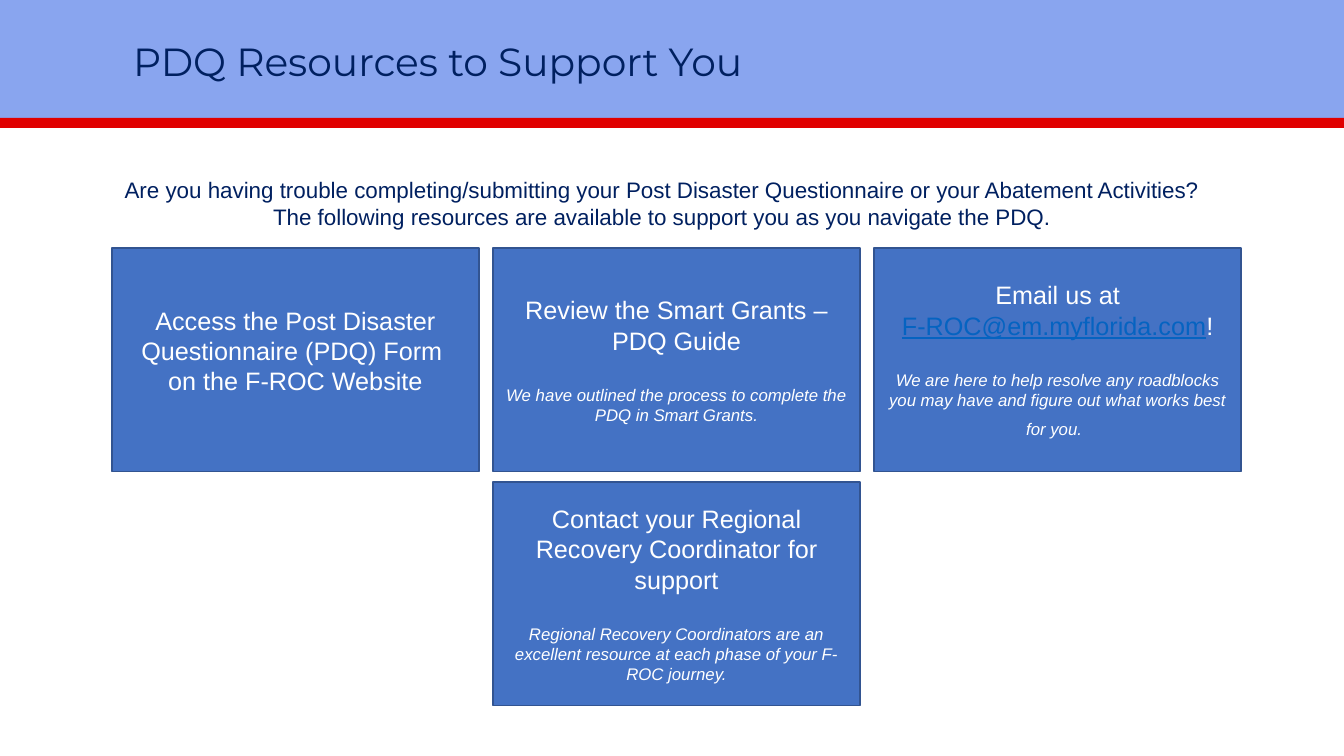
from pptx import Presentation
from pptx.dml.color import RGBColor
from pptx.enum.shapes import MSO_SHAPE
from pptx.enum.text import MSO_ANCHOR, MSO_AUTO_SIZE, PP_ALIGN
from pptx.util import Inches, Pt

RECT = MSO_SHAPE.RECTANGLE
TOP, MIDDLE = MSO_ANCHOR.TOP, MSO_ANCHOR.MIDDLE
LEFT, CENTER = PP_ALIGN.LEFT, PP_ALIGN.CENTER
NO_FIT = MSO_AUTO_SIZE.NONE

SLIDE_W, SLIDE_H = 13.33, 7.5
GRID_X, GRID_Y = 1.11, 2.46
CARD_W, CARD_H = 3.64, 2.22
GAP_X, GAP_Y = 0.14, 0.1
NAVY, WHITE, LINK = "002060", "FFFFFF", "0563C1"

CARDS = [
    (0, 0, [["Access the Post Disaster Questionnaire (PDQ) Form \non the F-ROC Website"]], [], 0.24),
    (1, 0, [["Review the Smart Grants – PDQ Guide"]],
     ["We have outlined the process to complete the PDQ in Smart Grants."], 0.05),
    (1, 1, [["Contact your Regional Recovery Coordinator for support"]],
     ["Regional Recovery Coordinators are an excellent resource at each phase of your F-ROC journey."], 0.05),
    (2, 0, [["Email us at"], ["F-ROC@em.myflorida.com", "!"]],
     ["We are here to help resolve any roadblocks you may have and figure out what works best for you.", " "], 0.05),
]


def rgb(value):
    return RGBColor.from_string(value)


def add_text(p, text, size=18, color=WHITE, font="Arial", italic=False, underline=False):
    for i, line in enumerate(text.split("\n")):
        if i:
            p.add_line_break()
        r = p.add_run()
        r.text = line
        r.font.name = font
        r.font.size = Pt(size)
        r.font.italic = italic
        r.font.underline = underline
        r.font.color.rgb = rgb(color)


def next_paragraph(tf, align=CENTER, before=0):
    p = tf.paragraphs[0] if not tf.paragraphs[0].runs else tf.add_paragraph()
    p.alignment = align
    if before:
        p.space_before = Pt(before)
    return p


def add_rect(slide, box, fill, line=None):
    sp = slide.shapes.add_shape(RECT, *map(Inches, box))
    sp.shadow.inherit = False
    sp.fill.solid()
    sp.fill.fore_color.rgb = rgb(fill)
    if line:
        sp.line.color.rgb = rgb(line)
        sp.line.width = Pt(1)
    else:
        sp.line.fill.background()
    return sp


def add_header(slide, box):
    x, y, w, h = box
    add_rect(slide, (x, y, w, h), "89A5EF")
    add_rect(slide, (x, y + h - 0.01, w, 0.1), "E00000")
    title = slide.shapes.title
    title.left, title.top = Inches(x + 1.22), Inches(y + 0.32)
    title.width, title.height = Inches(10.17), Inches(0.57)
    title._element.getparent().append(title._element)
    tf = title.text_frame
    tf.word_wrap = True
    tf.auto_size = NO_FIT
    tf.vertical_anchor = TOP
    add_text(next_paragraph(tf, LEFT), "PDQ Resources to Support You",
             size=28, color=NAVY, font="Montserrat")


def add_intro(slide, box):
    tf = slide.shapes.add_textbox(*map(Inches, box)).text_frame
    tf.word_wrap = True
    add_text(next_paragraph(tf),
             "Are you having trouble completing/submitting your Post Disaster Questionnaire "
             "or your Abatement Activities? The following resources are available to support "
             "you as you navigate the PDQ.", size=16, color=NAVY)


def add_card(slide, box, heading, note, bottom):
    tf = add_rect(slide, box, "4472C4", "325491").text_frame
    tf.word_wrap = True
    tf.vertical_anchor = MIDDLE
    tf.margin_bottom = Inches(bottom)
    for parts in heading:
        p = next_paragraph(tf)
        for text in parts:
            is_email = "@" in text
            add_text(p, text, color=LINK if is_email else WHITE, underline=is_email)
    if note:
        p = next_paragraph(tf, before=21)
        for text in note:
            is_note = bool(text.strip())
            add_text(p, text, size=12 if is_note else 18, italic=is_note)


def add_cards(slide, x, y):
    for col, row, heading, note, bottom in CARDS:
        box = (x + col * (CARD_W + GAP_X), y + row * (CARD_H + GAP_Y), CARD_W, CARD_H)
        add_card(slide, box, heading, note, bottom)


def main():
    prs = Presentation()
    prs.slide_width, prs.slide_height = Inches(SLIDE_W), Inches(SLIDE_H)
    slide = prs.slides.add_slide(prs.slide_layouts[5])
    add_header(slide, (0, 0, SLIDE_W, 1.18))
    add_intro(slide, (1.08, 1.7, 10.97, 0.64))
    add_cards(slide, GRID_X, GRID_Y)
    prs.save("out.pptx")


if __name__ == "__main__":
    main()
